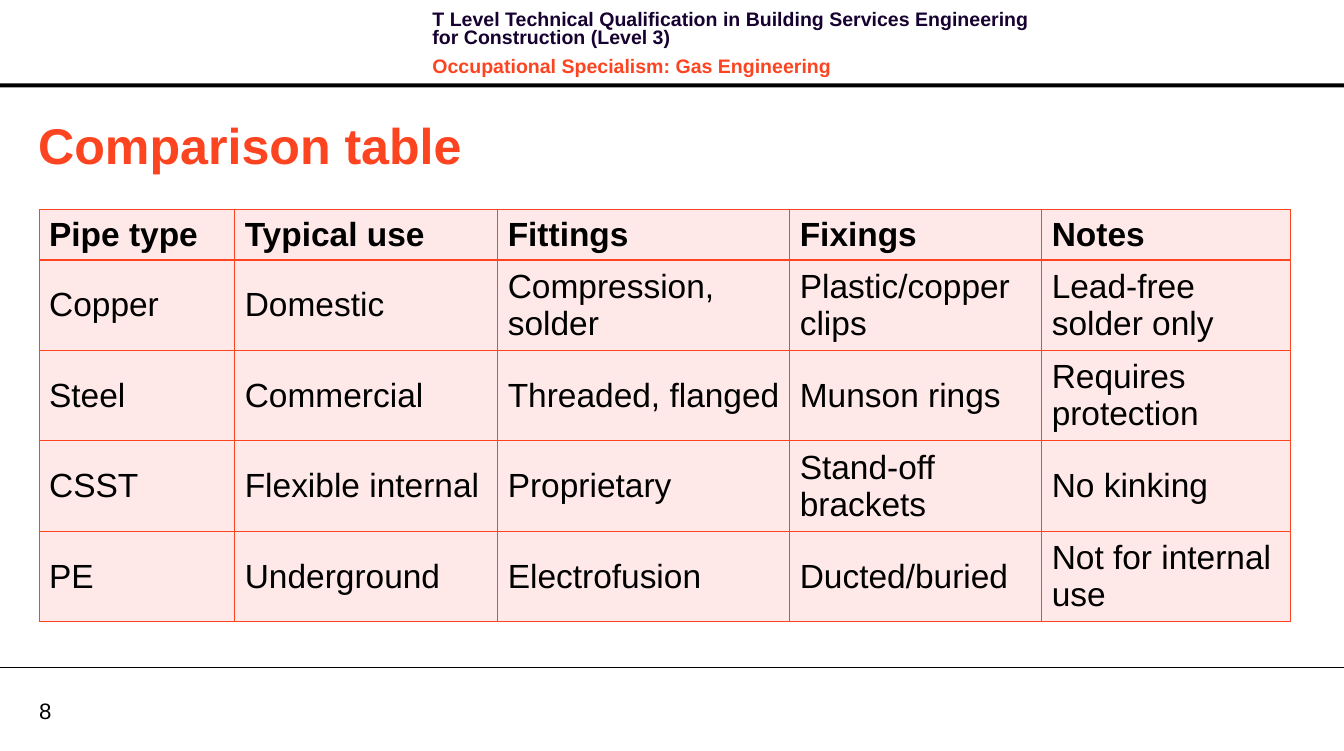
from dataclasses import dataclass

from lxml import etree
from pptx import Presentation
from pptx import util as u
from pptx.dml.color import RGBColor
from pptx.enum import shapes, text
from pptx.oxml.ns import qn

WIDTH, HEIGHT = u.Inches(13.39), u.Inches(7.48)
FONT = "Arial"
COLORS = {"black": "000000", "navy": "170130", "orange": "FC4421", "blush": "FEE9E8"}

# Column widths and row heights are percentages of the slide's size.
COLUMNS = [14.56, 19.57, 21.73, 18.75, 18.52]
ROWS = [6.28] + [11.23] * 4
PIPES = [
    ["Pipe type", "Typical use", "Fittings", "Fixings", "Notes"],
    ["Copper", "Domestic", "Compression, solder", "Plastic/copper clips",
     "Lead-free solder only"],
    ["Steel", "Commercial", "Threaded, flanged", "Munson rings", "Requires protection"],
    ["CSST", "Flexible internal", "Proprietary", "Stand-off brackets", "No kinking"],
    ["PE", "Underground", "Electrofusion", "Ducted/buried", "Not for internal use"],
]


@dataclass
class Box:
    """A rectangle in percentages of the slide's width and height."""
    left: float
    top: float
    width: float
    height: float

    def emu(self) -> tuple:
        return across(self.left), down(self.top), across(self.width), down(self.height)


@dataclass
class Style:
    size: float
    color: str = "black"
    bold: bool = False


def across(percent: float) -> int:
    return round(WIDTH * percent / 100)


def down(percent: float) -> int:
    return round(HEIGHT * percent / 100)


def rgb(name: str) -> RGBColor:
    return RGBColor.from_string(COLORS[name])


def format_paragraph(p, style: Style) -> None:
    p.alignment = text.PP_ALIGN.LEFT
    for r in p.runs:
        r.font.name = FONT
        r.font.size = u.Pt(style.size)
        r.font.bold = style.bold
        r.font.color.rgb = rgb(style.color)


def add_header(s) -> None:
    tf = s.shapes.add_textbox(*Box(31.44, 0.94, 47.57, 8.56).emu()).text_frame
    tf.word_wrap = True
    lines = [
        ("T Level Technical Qualification in Building Services Engineering "
         "for Construction (Level 3)", "navy"),
        ("Occupational Specialism: Gas Engineering", "orange"),
    ]
    tf.text = "\n".join(line for line, _ in lines)
    for i, (p, (_, color)) in enumerate(zip(tf.paragraphs, lines)):
        p.line_spacing = u.Pt(13.1)
        p.space_before = u.Pt(4 if i else 0)
        p.space_after = u.Pt(4)
        format_paragraph(p, Style(14, color, True))

    bar = s.shapes.add_shape(shapes.MSO_SHAPE.RECTANGLE, *Box(0, 11.1, 100, 0.53).emu())
    bar.shadow.inherit = False
    bar.fill.solid()
    bar.fill.fore_color.rgb = rgb("black")
    bar.line.fill.background()


def add_footer(s) -> None:
    rule = s.shapes.add_connector(
        shapes.MSO_CONNECTOR.STRAIGHT, 0, down(88.9), WIDTH, down(88.9))
    rule.line.color.rgb = rgb("black")
    rule.line.width = u.Pt(0.75)
    etree.SubElement(rule._element.spPr, qn("a:effectLst"))

    tf = s.shapes.add_textbox(*Box(2.91, 92.78, 4.78, 3.61).emu()).text_frame
    tf.margin_left = tf.margin_right = tf.margin_top = tf.margin_bottom = 0
    tf.word_wrap = True
    tf.vertical_anchor = text.MSO_ANCHOR.MIDDLE
    tf.text = "8"
    format_paragraph(tf.paragraphs[0], Style(16))


def set_title(s) -> None:
    title = s.shapes.title
    title.left, title.top, title.width, title.height = Box(2.09, 14.44, 95, 9.49).emu()
    tf = title.text_frame
    tf.text = "Comparison table"
    tf.vertical_anchor = text.MSO_ANCHOR.MIDDLE
    format_paragraph(tf.paragraphs[0], Style(36, "orange", True))


def add_borders(cell) -> None:
    tc_pr = cell._tc.get_or_add_tcPr()
    for i, side in enumerate(("lnL", "lnR", "lnT", "lnB")):
        ln = etree.Element(qn(f"a:{side}"), w=str(u.Pt(1)))
        fill = etree.SubElement(ln, qn("a:solidFill"))
        etree.SubElement(fill, qn("a:srgbClr"), val=COLORS["orange"])
        tc_pr.insert(i, ln)


def add_pipe_table(s) -> None:
    box = Box(2.91, 27.94, sum(COLUMNS), sum(ROWS))
    table = s.shapes.add_table(len(ROWS), len(COLUMNS), *box.emu()).table
    table.first_row = table.horz_banding = False
    for column, width in zip(table.columns, COLUMNS):
        column.width = across(width)
    for i, (row, height) in enumerate(zip(table.rows, ROWS)):
        row.height = down(height)
        for cell, wording in zip(row.cells, PIPES[i]):
            cell.text_frame.text = wording
            cell.vertical_anchor = text.MSO_ANCHOR.MIDDLE
            cell.fill.solid()
            cell.fill.fore_color.rgb = rgb("blush")
            format_paragraph(cell.text_frame.paragraphs[0], Style(24, bold=i == 0))
            add_borders(cell)


def main() -> None:
    prs = Presentation()
    prs.slide_width, prs.slide_height = WIDTH, HEIGHT
    s = prs.slides.add_slide(prs.slide_layouts[5])
    add_header(s)
    add_footer(s)
    set_title(s)
    add_pipe_table(s)
    prs.save("out.pptx")


if __name__ == "__main__":
    main()
